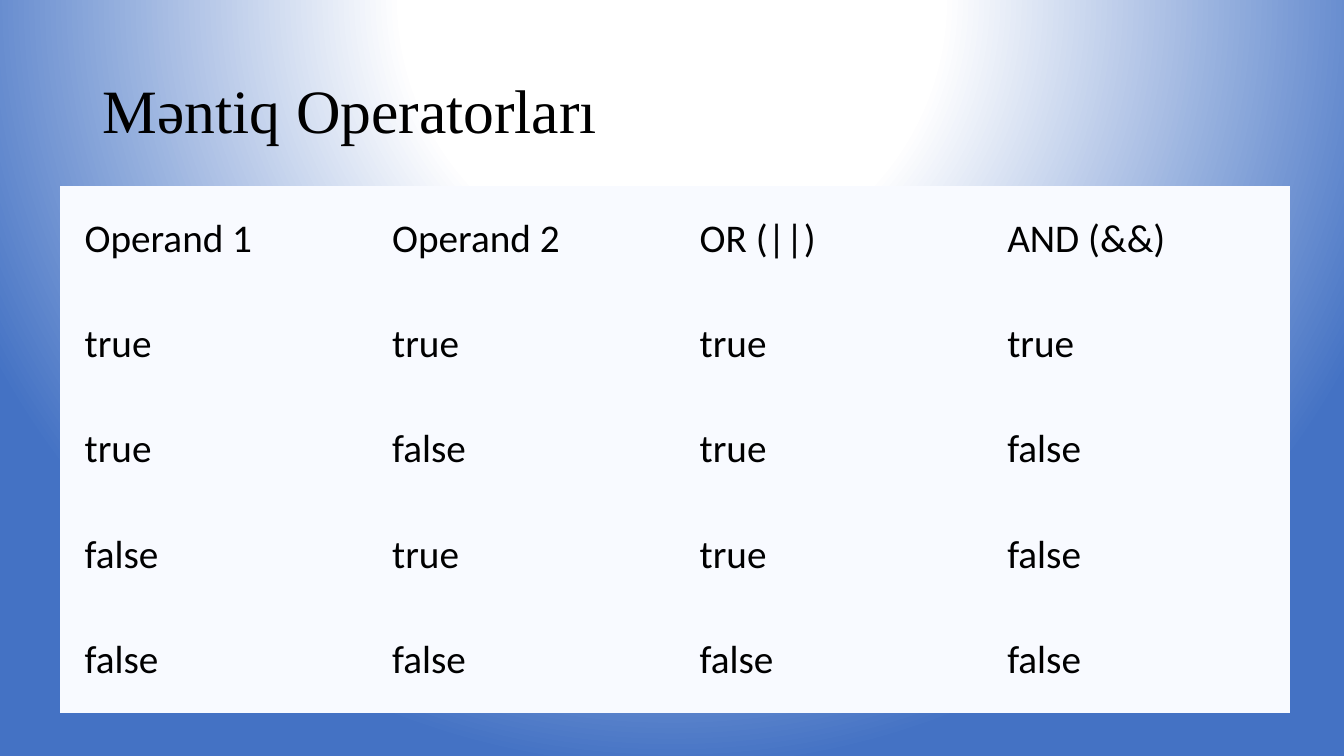
from itertools import product

from lxml import etree
from pptx import Presentation
from pptx.dml.color import RGBColor
from pptx.enum.text import MSO_ANCHOR as Anchor
from pptx.enum.text import MSO_AUTO_SIZE as AutoSize
from pptx.enum.text import PP_ALIGN as Align
from pptx.oxml import parse_xml
from pptx.oxml.ns import nsdecls, qn
from pptx.util import Inches, Pt

COLOURS = {"text": "000000", "cell": "F8FAFF", "glow": "FFFFFF", "edge": "4472C4"}
GLOW_STOPS = [(0, "glow"), (35, "glow"), (100, "edge")]
GLOW_CENTRE = {"l": 50, "t": -80, "r": 50, "b": 180}
TITLE_FONT = {"name": "Times New Roman", "size": Pt(44), "bold": False}
CELL_FONT = {"name": "Calibri", "size": Pt(28), "bold": False}
CELL_FORMAT = {
    "vertical_anchor": Anchor.MIDDLE,
    "margin_left": Inches(0.25),
    "margin_right": Inches(0.25),
    "margin_top": Inches(0.12),
    "margin_bottom": Inches(0.12),
}
PLAIN_TABLE = "{2D5ABB26-0587-4C30-8999-92F81FD0307C}"
HEADINGS = ["Operand 1", "Operand 2", "OR (||)", "AND (&&)"]


def apply_format(target, values):
    """Set each named attribute on the target."""
    for name, value in values.items():
        setattr(target, name, value)


def write_text(para, text, font):
    """Add one formatted run to the paragraph."""
    span = para.add_run()
    span.text = text
    apply_format(span.font, font)
    span.font.color.rgb = RGBColor.from_string(COLOURS["text"])


def paint_background(page):
    """Fill the page with a circular gradient centred above it."""
    page.background.fill.gradient()
    old = page.element.find(".//" + qn("a:gradFill"))
    gradient = parse_xml(f'<a:gradFill {nsdecls("a")} rotWithShape="1"/>')
    stops = etree.SubElement(gradient, qn("a:gsLst"))
    for position, colour in GLOW_STOPS:
        stop = etree.SubElement(stops, qn("a:gs"), pos=str(position * 1000))
        etree.SubElement(stop, qn("a:srgbClr"), val=COLOURS[colour])
    circle = etree.SubElement(gradient, qn("a:path"), {"path": "circle"})
    centre = {side: str(share * 1000) for side, share in GLOW_CENTRE.items()}
    etree.SubElement(circle, qn("a:fillToRect"), centre)
    old.getparent().replace(old, gradient)


def place_title(page, text, left, top, width, height):
    """Move the title placeholder into its box and write the title."""
    title = page.shapes.title
    apply_format(title, {"left": left, "top": top, "width": width, "height": height})
    frame = title.text_frame
    apply_format(frame, {"vertical_anchor": Anchor.MIDDLE, "word_wrap": True,
                         "auto_size": AutoSize.NONE})
    para = frame.paragraphs[0]
    apply_format(para, {"alignment": Align.LEFT, "line_spacing": 0.9})
    write_text(para, text, TITLE_FONT)


def truth_rows():
    """Return the headings followed by every pair of operands and its results."""
    rows = [HEADINGS]
    for first, second in product([True, False], repeat=2):
        values = [first, second, first or second, first and second]
        rows.append([str(value).lower() for value in values])
    return rows


def place_truth_table(page, rows, left, top, width, height):
    """Draw the rows as a plain table with equal cells."""
    box = page.shapes.add_table(len(rows), len(rows[0]), left, top, width, height)
    table = box.table
    apply_format(table, {"first_row": False, "horz_banding": False})
    box.element.find(".//" + qn("a:tableStyleId")).text = PLAIN_TABLE
    for row_index, row in enumerate(rows):
        for column_index, text in enumerate(row):
            cell = table.cell(row_index, column_index)
            apply_format(cell, CELL_FORMAT)
            cell.fill.solid()
            cell.fill.fore_color.rgb = RGBColor.from_string(COLOURS["cell"])
            write_text(cell.text_frame.paragraphs[0], text, CELL_FONT)


def main():
    """Build the slide and save the deck."""
    deck = Presentation()
    apply_format(deck, {"slide_width": Inches(13.33), "slide_height": Inches(7.5)})
    page = deck.slides.add_slide(deck.slide_layouts.get_by_name("Title Only"))
    paint_background(page)
    place_title(page, "Məntiq Operatorları",
                Inches(0.92), Inches(0.4), Inches(11.5), Inches(1.45))
    place_truth_table(page, truth_rows(),
                      Inches(0.59), Inches(1.85), Inches(12.2), Inches(5.22))
    deck.save("out.pptx")


if __name__ == "__main__":
    main()
